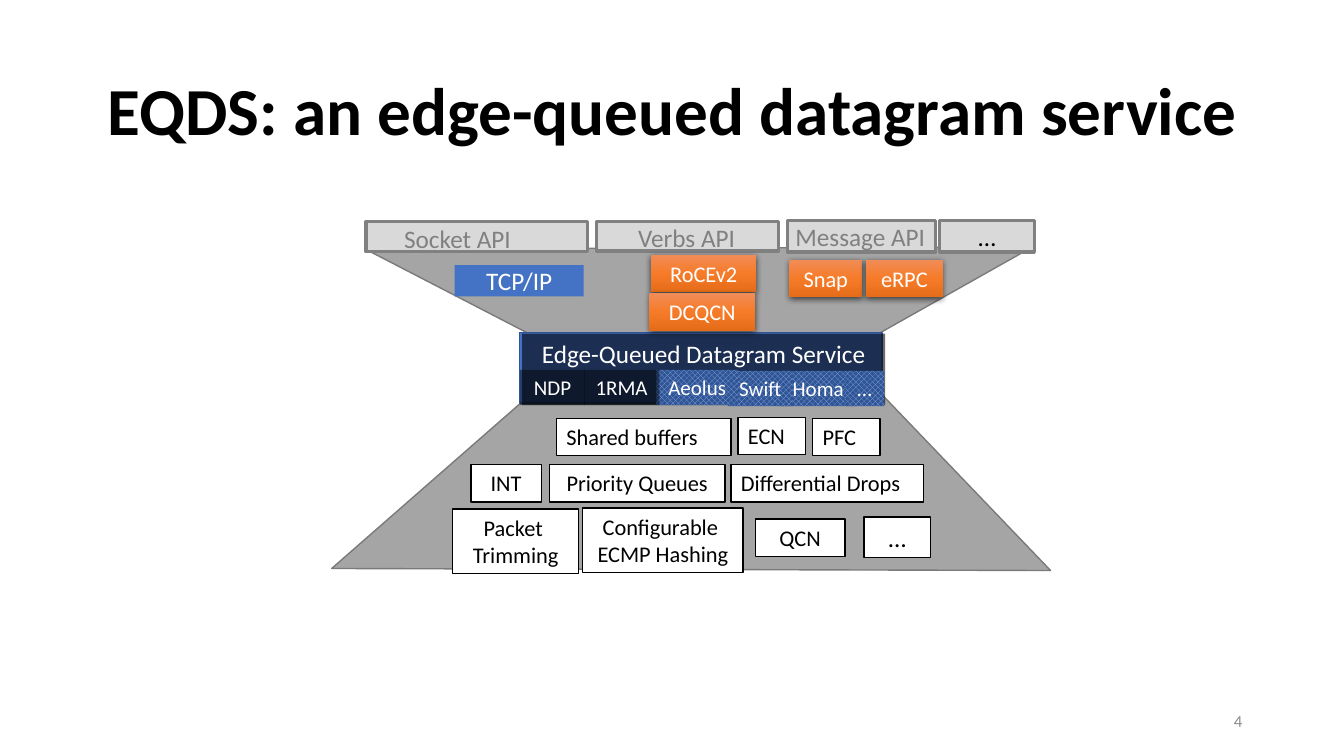
import copy

import pptx
import pptx.dml.color
import pptx.enum.dml
import pptx.enum.shapes
import pptx.enum.text
import pptx.oxml
import pptx.oxml.ns
import pptx.util

Inches = pptx.util.Inches
Pt = pptx.util.Pt
ALIGN = pptx.enum.text.PP_ALIGN
ANCHOR = pptx.enum.text.MSO_ANCHOR
qn = pptx.oxml.ns.qn

COLORS = {
    "black": "000000", "white": "FFFFFF", "funnel": "A5A5A5", "funnel_edge": "7A7A7A",
    "api": "D9D9D9", "api_edge": "808080", "blue": "4472C4", "blue_edge": "325491",
    "check_front": "8FAADC", "check_back": "2F5597", "number": "8C8C8C",
    "orange_top": "F18C57", "orange_mid": "F67B28", "orange_low": "E56C19",
}
FUNNEL = [(3.62, 2.47), (10.24, 2.45), (8.36, 3.51), (10.42, 5.66), (3.29, 5.64), (5.69, 3.54)]
API_BARS = [(3.63, 2.2, 2.2, 0.3), (5.92, 2.2, 1.8, 0.29), (7.81, 2.19, 1.47, 0.31)]
API_LABELS = [
    ("Socket API", (3.91, 2.17, 1.28, 0.4)),
    ("Verbs API", (6.23, 2.16, 1.24, 0.4)),
    ("Message API", (7.79, 2.15, 1.59, 0.4)),
]
TRANSPORTS = [
    ("RoCEv2", (6.46, 2.53, 1.04, 0.37)),
    ("DCQCN", (6.44, 2.91, 1.05, 0.37)),
    ("Snap", (7.83, 2.58, 0.72, 0.37)),
    ("eRPC", (8.59, 2.58, 0.76, 0.37)),
]
SWITCH_FEATURES = [
    ("Shared buffers", (5.52, 4.15, 1.73, 0.37), ALIGN.LEFT, 16),
    ("ECN", (7.32, 4.14, 0.67, 0.37), ALIGN.LEFT, 16),
    ("PFC", (8.06, 4.15, 0.67, 0.37), ALIGN.LEFT, 16),
    ("INT", (4.67, 4.61, 0.7, 0.37), ALIGN.CENTER, 16),
    ("Priority Queues", (5.45, 4.61, 1.74, 0.37), ALIGN.CENTER, 16),
    ("Differential Drops", (7.25, 4.61, 1.91, 0.37), ALIGN.LEFT, 16),
    ("Packet \nTrimming", (4.49, 5.05, 1.25, 0.64), ALIGN.CENTER, 16),
    ("Configurable \nECMP Hashing", (5.78, 5.04, 1.59, 0.64), ALIGN.CENTER, 16),
    ("QCN", (7.49, 5.15, 0.89, 0.37), ALIGN.CENTER, 16),
    ("…", (8.57, 5.13, 0.66, 0.4), ALIGN.CENTER, 18),
]
CHECKED_PROTOCOLS = [
    ("Homa", (7.73, 3.68, 0.77, 0.35)),
    ("Swift", (7.22, 3.68, 0.64, 0.35)),
    ("Aeolus", (6.51, 3.67, 0.81, 0.35)),
    ("…", (8.38, 3.68, 0.39, 0.35)),
]
DARK_PROTOCOLS = [("1RMA", (5.79, 3.67, 0.75, 0.35)), ("NDP", (5.16, 3.67, 0.64, 0.35))]


def rgb(name):
    """Return the named colour."""
    return pptx.dml.color.RGBColor.from_string(COLORS[name])


def write(shape, text, size, color, align=ALIGN.CENTER, anchor=ANCHOR.TOP, bold=False):
    """Fill a shape with formatted text, one paragraph a line."""
    frame = shape.text_frame
    frame.text = text
    frame.word_wrap = True
    frame.vertical_anchor = anchor
    font_format = {"name": "Calibri", "size": Pt(size), "bold": bold}
    for paragraph in frame.paragraphs:
        paragraph.alignment = align
        for attribute, value in font_format.items():
            setattr(paragraph.runs[0].font, attribute, value)
        paragraph.runs[0].font.color.rgb = rgb(color)


def paint(shape, fill, edge=None, width=1.0, alpha=None):
    """Give a shape a plain fill, an optional outline and no shadow."""
    shape.shadow.inherit = False
    shape.fill.solid()
    shape.fill.fore_color.rgb = rgb(fill)
    if alpha is not None:
        tint = shape.fill._xPr.find(qn("a:solidFill"))[0]
        tint.append(pptx.oxml.parse_xml(
            f'<a:alpha {pptx.oxml.ns.nsdecls("a")} val="{alpha * 1000}"/>'))
    if edge:
        shape.line.color.rgb = rgb(edge)
        shape.line.width = Pt(width)
    else:
        shape.line.fill.background()


def add_box(shapes, place, fill, edge=None, width=1.0, alpha=None):
    """Add a painted rectangle."""
    box = shapes.add_shape(pptx.enum.shapes.MSO_SHAPE.RECTANGLE, *map(Inches, place))
    paint(box, fill, edge, width, alpha)
    return box


def add_label(shapes, place, text, size, color, align, anchor=ANCHOR.TOP):
    """Add a text box."""
    write(shapes.add_textbox(*map(Inches, place)), text, size, color, align, anchor)


def add_funnel(shapes):
    """Add the hourglass behind the protocol layers."""
    start, *corners = [(Inches(x), Inches(y)) for x, y in FUNNEL]
    builder = shapes.build_freeform(*start)
    builder.add_line_segments(corners, close=True)
    paint(builder.convert_to_shape(), "funnel", "funnel_edge")


def add_transport(shapes, text, place):
    """Add an orange gradient box with a soft shadow."""
    box = add_box(shapes, place, "orange_mid")
    box.fill.gradient()
    box.fill.gradient_angle = 270
    stop_list = box._element.spPr.find(qn("a:gradFill")).find(qn("a:gsLst"))
    stop_list.append(copy.deepcopy(stop_list[0]))
    stops = zip(box.fill.gradient_stops, ("orange_top", "orange_mid", "orange_low"))
    for index, (stop, color) in enumerate(stops):
        stop.position = index / 2
        stop.color.rgb = rgb(color)
    box._element.spPr.find(qn("a:effectLst")).append(pptx.oxml.parse_xml(
        f'<a:outerShdw {pptx.oxml.ns.nsdecls("a")} blurRad="{Pt(4.5)}" dist="{Pt(1.5)}" '
        'dir="5400000" algn="ctr" rotWithShape="0"><a:srgbClr val="000000">'
        '<a:alpha val="63000"/></a:srgbClr></a:outerShdw>'))
    write(box, text, 16, "white")


def add_checked(shapes, text, place):
    """Add a box with a checker pattern."""
    box = add_box(shapes, place, "check_back")
    box.fill.patterned()
    box.fill.pattern = pptx.enum.dml.MSO_PATTERN.LARGE_CHECKER_BOARD
    box.fill.fore_color.rgb = rgb("check_front")
    box.fill.back_color.rgb = rgb("check_back")
    write(box, text, 15, "white")


def add_api_layer(shapes):
    """Add the application interfaces at the top."""
    for place in API_BARS:
        add_box(shapes, place, "api", "api_edge", 2.25)
    for text, place in API_LABELS:
        add_label(shapes, place, text, 18, "api_edge", ALIGN.LEFT)
    more = add_box(shapes, (9.32, 2.19, 0.94, 0.31), "api", "api_edge", 2.25)
    write(more, "…", 18, "black", anchor=ANCHOR.MIDDLE)


def add_service_layer(shapes):
    """Add the datagram service and the protocols it hosts."""
    add_box(shapes, (5.15, 3.3, 3.6, 0.7), "blue", "blue_edge")
    service = add_box(shapes, (5.18, 3.31, 3.6, 0.71), "black", alpha=58)
    write(service, "Edge-Queued Datagram Service", 18, "white")
    protocols = shapes.add_group_shape().shapes
    for text, place in CHECKED_PROTOCOLS:
        add_checked(protocols, text, place)
    for text, place in DARK_PROTOCOLS:
        write(add_box(protocols, place, "black", alpha=45), text, 15, "white")


def add_title(slide):
    """Place and format the slide title."""
    title = slide.shapes.title
    place = {"left": 0.92, "top": 0.4, "width": 11.5, "height": 1.45}
    for attribute, value in place.items():
        setattr(title, attribute, Inches(value))
    write(title, "EQDS: an edge-queued datagram service", 48, "black",
          anchor=ANCHOR.MIDDLE, bold=True)
    title.text_frame.paragraphs[0].line_spacing = 0.9


def main():
    """Build the slide and save it."""
    deck = pptx.Presentation()
    deck.slide_width, deck.slide_height = Inches(13.33), Inches(7.5)
    slide = deck.slides.add_slide(deck.slide_layouts.get_by_name("Title Only"))
    shapes = slide.shapes
    add_title(slide)
    add_funnel(shapes)
    add_api_layer(shapes)
    tcp = add_box(shapes, (4.51, 2.63, 1.28, 0.31), "blue")
    write(tcp, "TCP/IP", 18, "white", anchor=ANCHOR.MIDDLE)
    for text, place, align, size in SWITCH_FEATURES:
        write(add_box(shapes, place, "white", "black"), text, size, "black", align)
    add_service_layer(shapes)
    for text, place in TRANSPORTS:
        add_transport(shapes, text, place)
    add_label(shapes, (9.42, 6.95, 3, 0.4), "4", 12, "number", ALIGN.RIGHT, ANCHOR.MIDDLE)
    deck.save("out.pptx")


if __name__ == "__main__":
    main()
